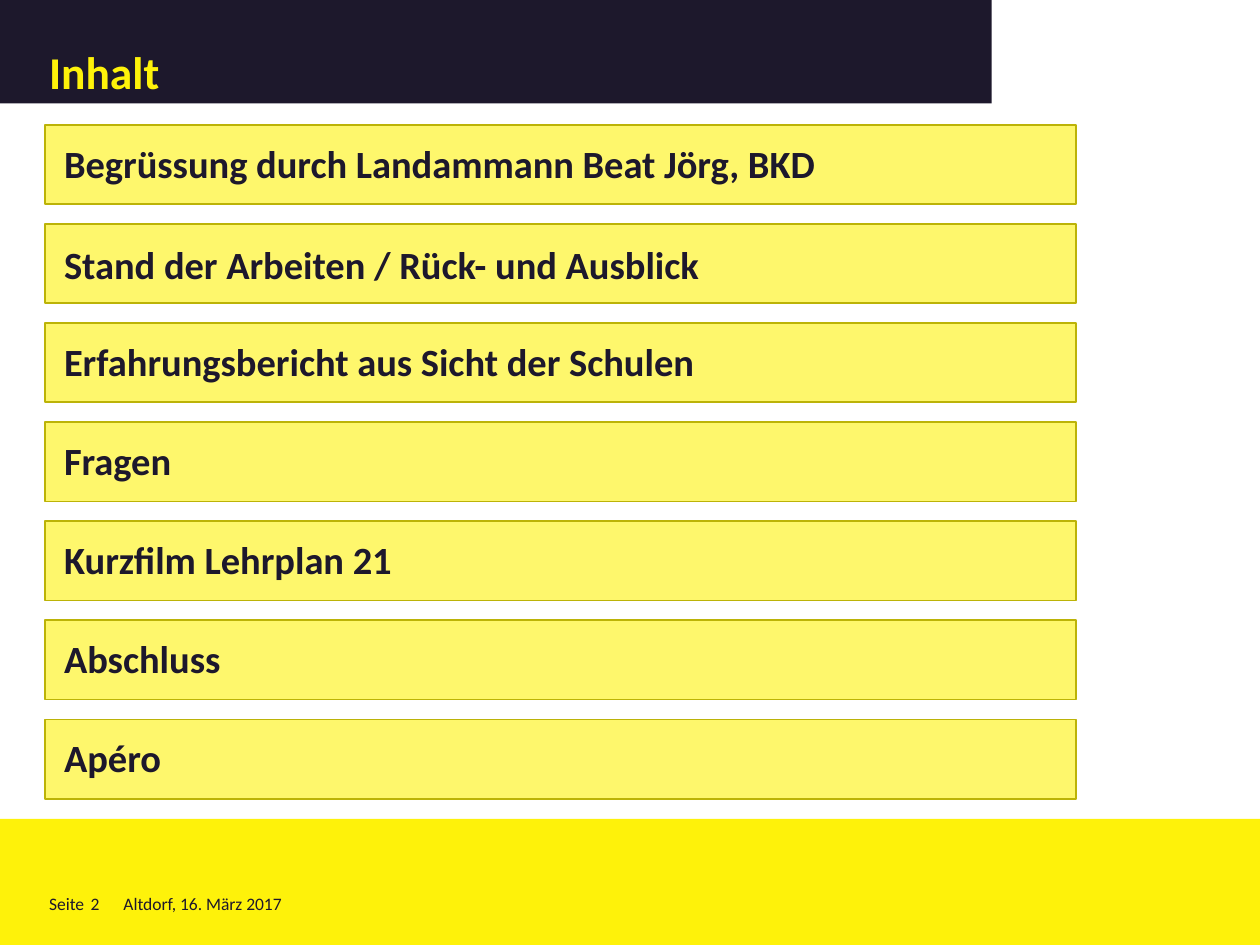
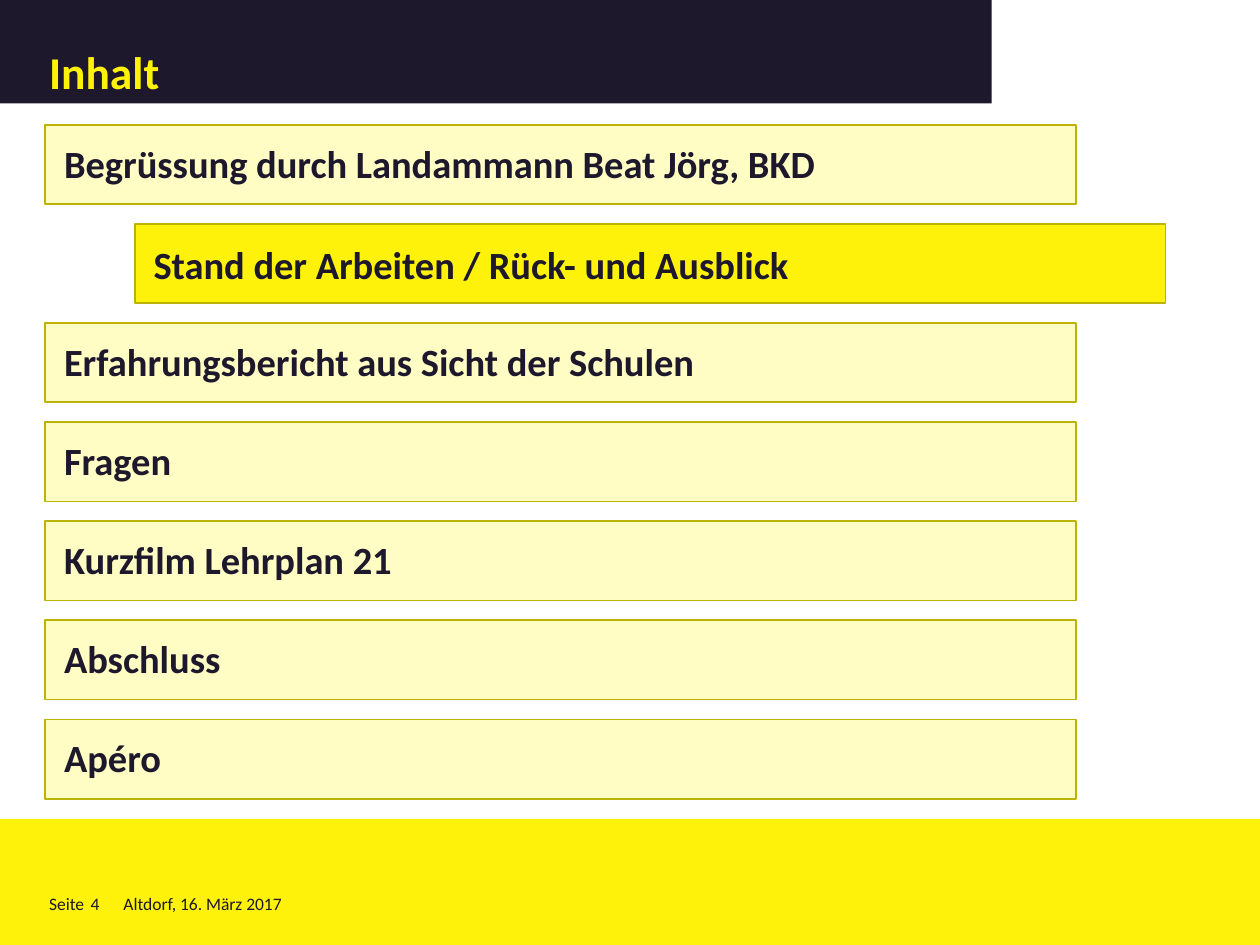
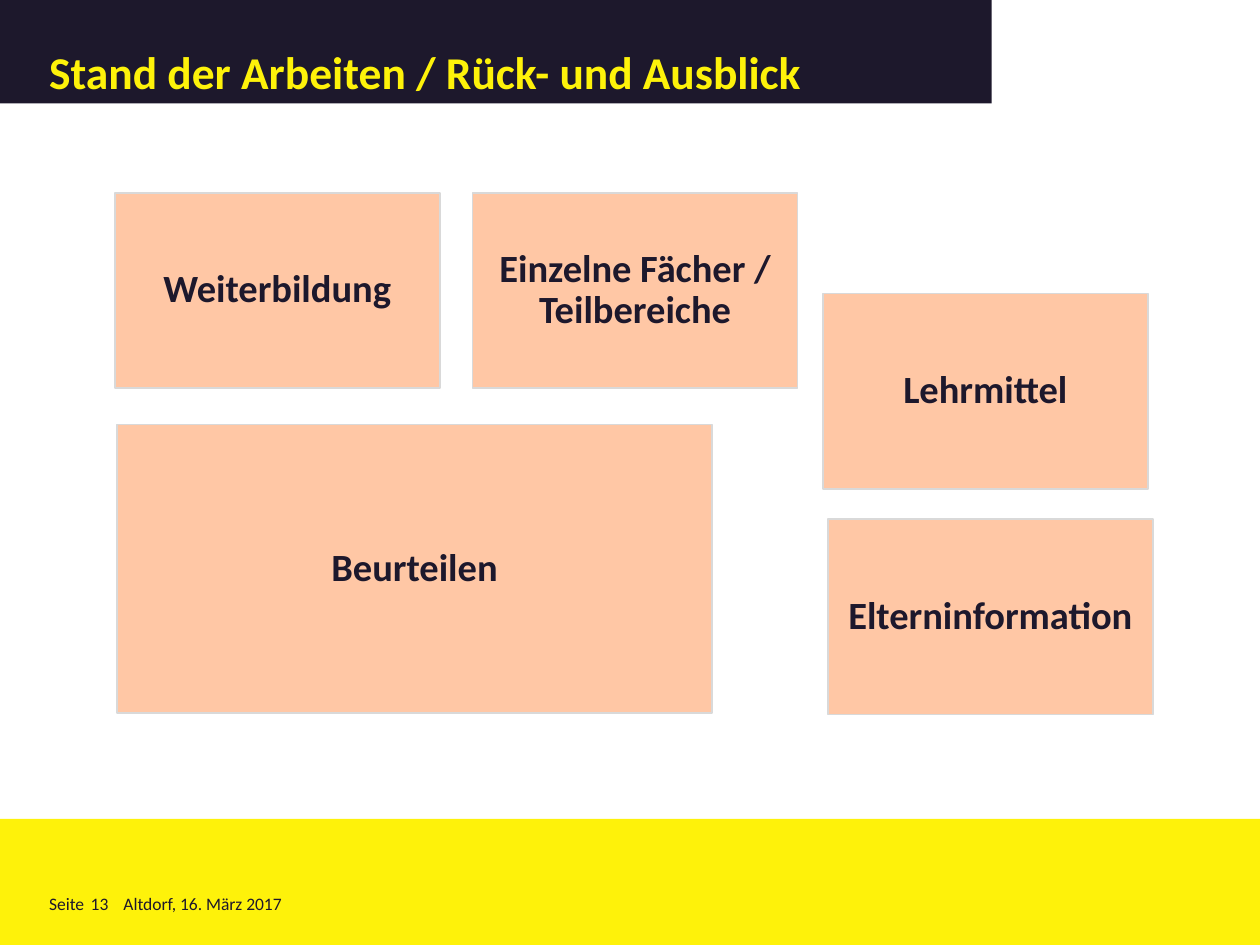
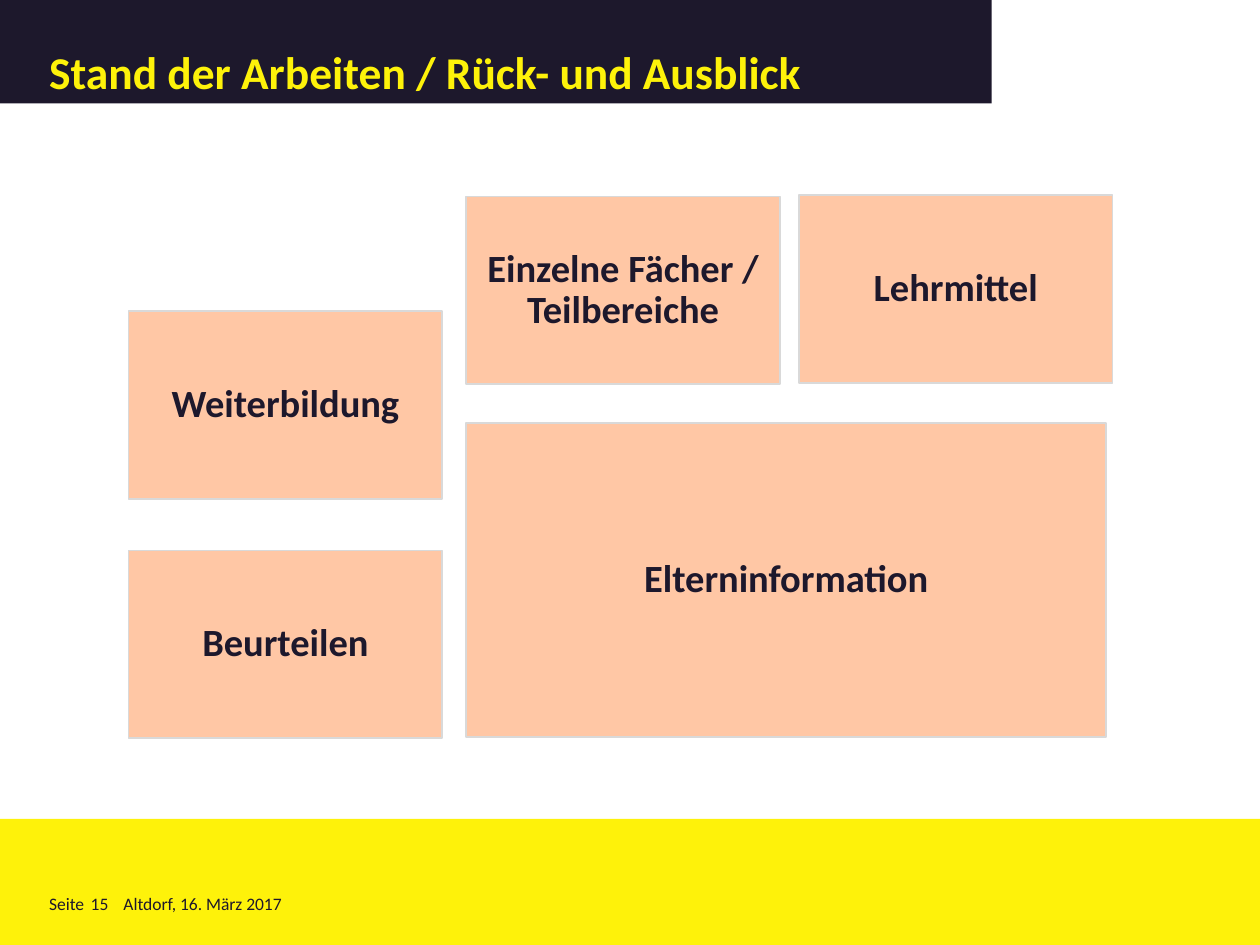
from lxml import etree
from pptx import Presentation
from pptx.dml.color import RGBColor
from pptx.enum.shapes import MSO_SHAPE
from pptx.enum.text import MSO_ANCHOR, MSO_AUTO_SIZE, PP_ALIGN
from pptx.oxml.ns import qn
from pptx.util import Inches, Pt

RECTANGLE = MSO_SHAPE.RECTANGLE
TOP, MIDDLE, BOTTOM = MSO_ANCHOR.TOP, MSO_ANCHOR.MIDDLE, MSO_ANCHOR.BOTTOM
LEFT, CENTER = PP_ALIGN.LEFT, PP_ALIGN.CENTER
GROW = MSO_AUTO_SIZE.SHAPE_TO_FIT_TEXT

FONT = "Calibri"
DARK = "1D182C"
YELLOW = "FEF20A"
SOFT_YELLOW = "FEF76C"
PALE_YELLOW = "FFFA9D"
OLIVE = "BCB307"
PEACH = "FFC7A5"
GREY = "D9D9D9"

STATUS = "Stand der Arbeiten / Rück- und Ausblick"
DATE = "Altdorf, 16. März 2017"

AGENDA = [
    ("Begrüssung durch Landammann Beat Jörg, BKD", 8.28, 0.07),
    (STATUS, 8.28, 0.09),
    ("Erfahrungsbericht aus Sicht der Schulen", 5.59, 0.07),
    ("Fragen", 5.59, 0.07),
    ("Kurzfilm Lehrplan 21", 5.59, 0.07),
    ("Abschluss", 5.59, 0.07),
    ("Apéro", 5.59, 0.07),
]
BAR_LEFT, BAR_WIDTH, BAR_HEIGHT = 0.36, 8.18, 0.63
BAR_FIRST, BAR_LAST = 0.99, 5.71
BAR_SHIFT = 0.71

SMALL_13, LARGE_13 = (2.58, 1.55), (4.72, 2.29)
SMALL_15, LARGE_15 = (2.49, 1.49), (5.08, 2.49)
SUBJECTS = "Einzelne Fächer / Teilbereiche"

SLIDES = [
    {"title": "Inhalt", "number": 2, "current": None},
    {"title": "Inhalt", "number": 4, "current": 1},
    {"title": STATUS, "number": 13, "topics": [
        ("Weiterbildung", (0.91, 1.53), SMALL_13),
        (SUBJECTS, (3.75, 1.53), SMALL_13),
        ("Lehrmittel", (6.53, 2.33), SMALL_13),
        ("Beurteilen", (0.93, 3.37), LARGE_13),
        ("Elterninformation", (6.57, 4.12), SMALL_13),
    ]},
    {"title": STATUS, "number": 15, "topics": [
        ("Weiterbildung", (1.02, 2.47), SMALL_15),
        (SUBJECTS, (3.7, 1.56), SMALL_15),
        ("Lehrmittel", (6.34, 1.55), SMALL_15),
        ("Beurteilen", (1.02, 4.37), SMALL_15),
        ("Elterninformation", (3.7, 3.36), LARGE_15),
    ]},
]


def color(value):
    return RGBColor.from_string(value)


def add_rectangle(page, left, top, width, height, fill, line=None, opacity=None):
    box = page.shapes.add_shape(
        RECTANGLE, Inches(left), Inches(top), Inches(width), Inches(height))
    box.shadow.inherit = False
    box.fill.solid()
    box.fill.fore_color.rgb = color(fill)
    if opacity:
        tint = box.fill._xPr.find(qn("a:solidFill"))[0]
        etree.SubElement(tint, qn("a:alpha"), val=str(opacity * 1000))
    if line:
        box.line.color.rgb = color(line)
        box.line.width = Pt(1)
    else:
        box.line.fill.background()
    return box


def write(box, text, size, ink=DARK, bold=False, align=LEFT, anchor=TOP,
          insets=(0.1, 0.05, 0.1, 0.05), spacing=None):
    frame = box.text_frame
    frame.word_wrap = True
    frame.vertical_anchor = anchor
    (frame.margin_left, frame.margin_top,
     frame.margin_right, frame.margin_bottom) = map(Inches, insets)
    frame.text = text
    para = frame.paragraphs[0]
    para.alignment = align
    para.line_spacing = spacing
    for span in para.runs:
        span.font.name = FONT
        span.font.size = Pt(size)
        span.font.bold = bold
        span.font.color.rgb = color(ink)


def add_text(page, text, left, top, width, height, size, **style):
    box = page.shapes.add_textbox(
        Inches(left), Inches(top), Inches(width), Inches(height))
    write(box, text, size, **style)
    box.text_frame.auto_size = GROW


def add_frame(page, title, number):
    add_rectangle(page, 0, 6.5, 10, 1, YELLOW)
    for text, left, width in (("Seite", 0.39, 0.35), (DATE, 0.98, 2.28),
                              (str(number), 0.72, 0.3)):
        add_text(page, text, left, 7.09, width, 0.17, 10, insets=(0, 0, 0, 0))
    banner = add_rectangle(page, 0, 0, 7.87, 0.82, DARK)
    write(banner, title, 26, ink=YELLOW, bold=True, anchor=BOTTOM,
          insets=(0.39, 0.08, 0.08, 0.04), spacing=0.8)


def add_agenda(page, current):
    pitch = (BAR_LAST - BAR_FIRST) / (len(AGENDA) - 1)
    for index, (text, text_width, drop) in enumerate(AGENDA):
        left, top = BAR_LEFT, BAR_FIRST + index * pitch
        fill, opacity = SOFT_YELLOW, None
        if index == current:
            left += BAR_SHIFT
            fill = YELLOW
        elif current is not None:
            fill, opacity = PALE_YELLOW, 60
        add_rectangle(page, left, top, BAR_WIDTH, BAR_HEIGHT, fill, OLIVE, opacity)
        add_text(page, text, left + 0.05, top + drop, text_width, 0.47, 22, bold=True)


def add_topics(page, topics):
    for text, position, size in topics:
        tile = add_rectangle(page, *position, *size, PEACH, GREY)
        write(tile, text, 22, bold=True, align=CENTER, anchor=MIDDLE,
              insets=(0.09, 0.09, 0.09, 0.09), spacing=0.9)


def main():
    deck = Presentation()
    deck.slide_width, deck.slide_height = Inches(10), Inches(7.5)
    for content in SLIDES:
        page = deck.slides.add_slide(deck.slide_layouts[6])
        add_frame(page, content["title"], content["number"])
        if "topics" in content:
            add_topics(page, content["topics"])
        else:
            add_agenda(page, content["current"])
    deck.save("out.pptx")


if __name__ == "__main__":
    main()
